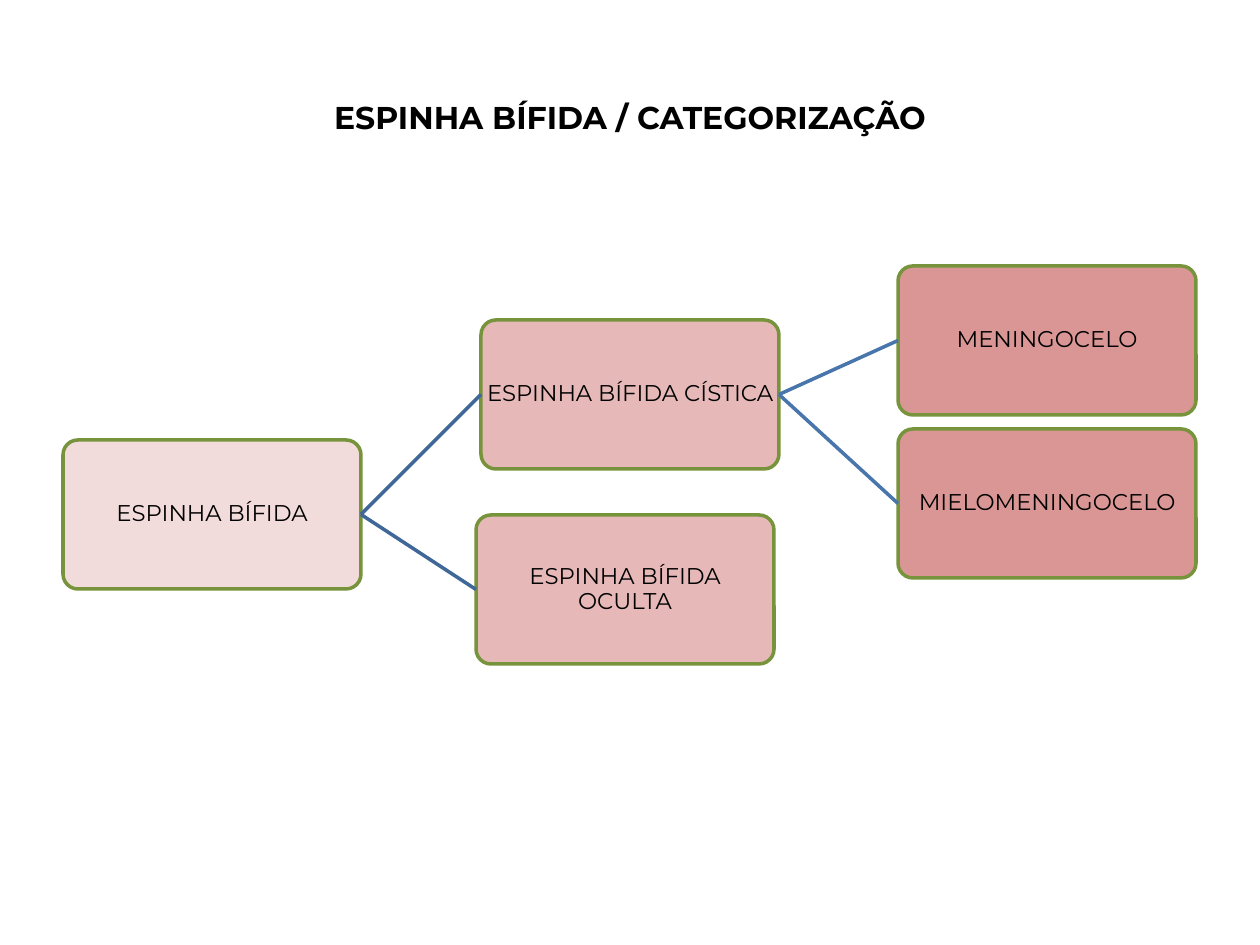
from pptx import Presentation
from pptx.dml.color import RGBColor as Rgb
from pptx.enum.shapes import MSO_CONNECTOR as Conn, MSO_SHAPE as Kind
from pptx.enum.text import MSO_ANCHOR as Anchor, PP_ALIGN as Align
from pptx.oxml.ns import qn
from pptx.util import Pt
from lxml.etree import SubElement

PX = 914400 / 126
THEME = dict(font="Montserrat", ink="000000", edge="77933C", stroke=2,
             head=18, body=13,
             fills=["F2DCDB", "E6B9B8", "D99694"], links=["3F6797", "4875AC"])


def emu(*vals):
    return [round(v * PX) for v in vals]


def write(shape, text, size, bold, pad, gap):
    frame = shape.text_frame
    side, top = emu(*pad)
    form = dict(word_wrap=True, vertical_anchor=Anchor.MIDDLE,
                margin_left=side, margin_right=side,
                margin_top=top, margin_bottom=top)
    for key, val in form.items():
        setattr(frame, key, val)
    para = frame.paragraphs[0]
    para.alignment, para.line_spacing = Align.CENTER, gap
    run = para.add_run()
    run.text = text
    for key, val in dict(name=THEME["font"], size=Pt(size), bold=bold).items():
        setattr(run.font, key, val)
    run.font.color.rgb = Rgb.from_string(THEME["ink"])


deck = Presentation()
deck.slide_width, deck.slide_height = emu(1260, 945)
slide = deck.slides.add_slide(deck.slide_layouts[6])
shapes = slide.shapes

title = shapes.add_textbox(*emu(63, 38, 1134, 158))
write(title, "ESPINHA BÍFIDA / CATEGORIZAÇÃO", THEME["head"], True, (13, 6), 1.0)

WIDE, HIGH = 298, 149
nodes = [
    ("root", None, 0, 63, 440, "ESPINHA BÍFIDA"),
    ("cyst", "root", 1, 481, 320, "ESPINHA BÍFIDA CÍSTICA"),
    ("men", "cyst", 2, 898, 266, "MENINGOCELO"),
    ("miel", "cyst", 2, 898, 429, "MIELOMENINGOCELO"),
    ("hid", "root", 1, 476, 515, "ESPINHA BÍFIDA OCULTA"),
]
LEFT, RIGHT = 1, 3
boxes = {}
for name, parent, level, x, y, text in nodes:
    box = shapes.add_shape(Kind.ROUNDED_RECTANGLE, *emu(x, y, WIDE, HIGH))
    box.adjustments[0] = 0.1
    box.shadow.inherit = False
    box.fill.solid()
    box.fill.fore_color.rgb = Rgb.from_string(THEME["fills"][level])
    box.line.color.rgb = Rgb.from_string(THEME["edge"])
    box.line.width = Pt(THEME["stroke"])
    write(box, text, THEME["body"], False, (1, 1), 0.9)
    boxes[name] = box
    if parent:
        link = shapes.add_connector(Conn.STRAIGHT, 0, 0, 0, 0)
        link.begin_connect(boxes[parent], RIGHT)
        link.end_connect(box, LEFT)
        link.line.color.rgb = Rgb.from_string(THEME["links"][level - 1])
        link.line.width = Pt(THEME["stroke"])
        SubElement(link._element.spPr, qn("a:effectLst"))

deck.save("out.pptx")
